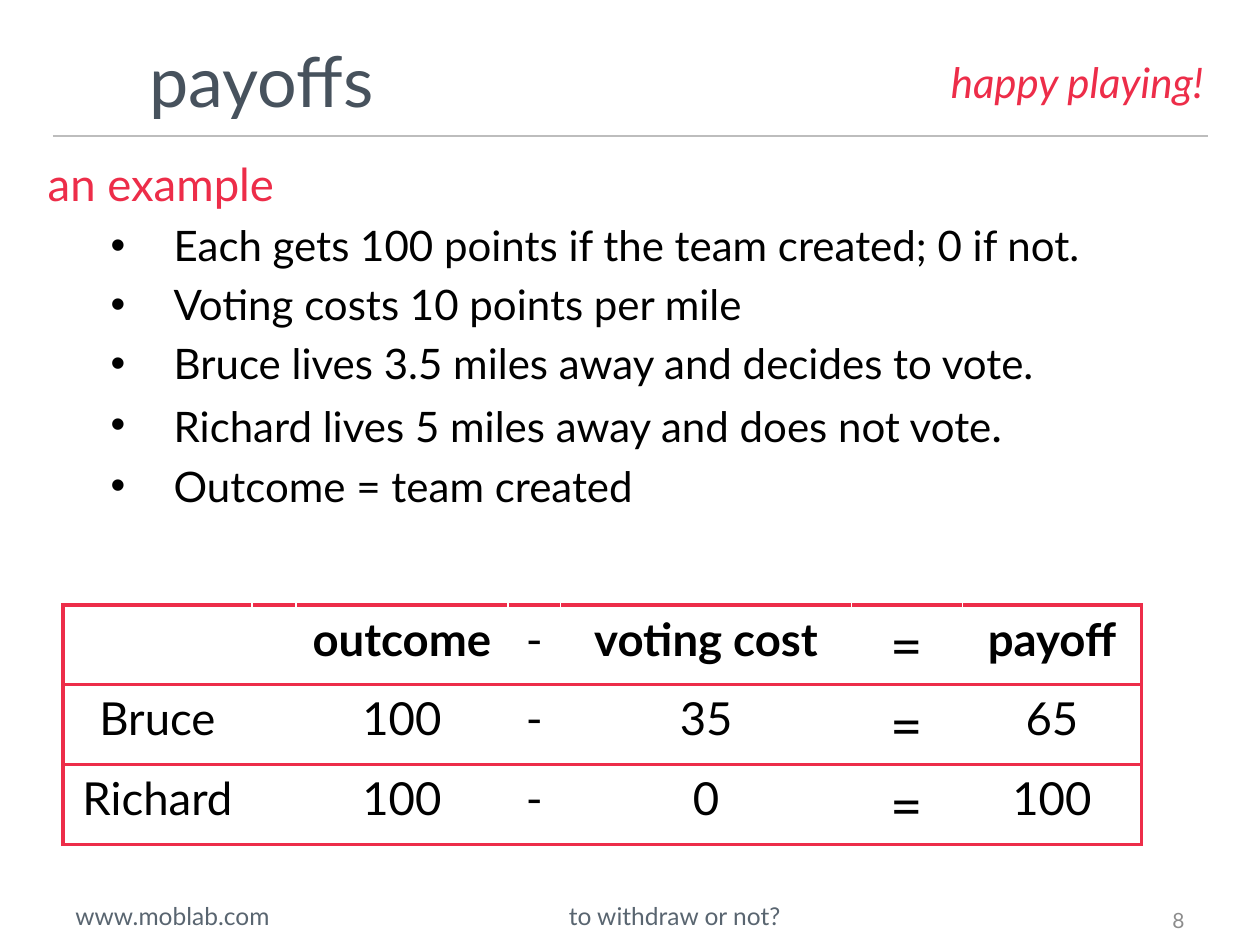
from lxml import etree
from pptx import Presentation
from pptx.dml.color import RGBColor
from pptx.enum.shapes import MSO_CONNECTOR
from pptx.enum.text import MSO_ANCHOR, PP_ALIGN
from pptx.oxml.ns import qn
from pptx.util import Inches, Pt

LEFT, CENTER, RIGHT = PP_ALIGN.LEFT, PP_ALIGN.CENTER, PP_ALIGN.RIGHT
TOP, MIDDLE = MSO_ANCHOR.TOP, MSO_ANCHOR.MIDDLE
STRAIGHT = MSO_CONNECTOR.STRAIGHT

FONT = "Lato"
RED, BLACK, SLATE, FOOTER_GRAY = "ED2D49", "000000", "47525D", "596570"
NUMBER_GRAY, RULE_GRAY = "8C8C8C", "BDBDBD"

FACTS = [
    "Each gets 100 points if the team created; 0 if not.",
    "Voting costs 10 points per mile",
    "Bruce lives 3.5 miles away and decides to vote.",
    "Richard lives 5 miles away and does not vote.",
    "Outcome = team created",
]
PAYOFF_COLUMNS = [1.5, 0.35, 1.68, 0.42, 2.31, 0.88, 1.42]
PAYOFF_ROWS = [
    ["", "", "outcome", "-", "voting cost", "=", "payoff"],
    ["Bruce", "", "100", "-", "35", "=", "65"],
    ["Richard", "", "100", "-", "0", "=", "100"],
]


def rgb(color):
    return RGBColor.from_string(color)


def style(font, size, color, bold=False, italic=False):
    font.name, font.size = FONT, Pt(size)
    font.bold, font.italic = bold, italic
    font.color.rgb = rgb(color)


def add_text_frame(slide, box, anchor=TOP):
    frame = slide.shapes.add_textbox(*map(Inches, box)).text_frame
    frame.word_wrap = True
    frame.vertical_anchor = anchor
    return frame


def add_line_of_text(slide, box, text, size, color, align=LEFT, anchor=TOP, italic=False):
    frame = add_text_frame(slide, box, anchor)
    paragraph = frame.paragraphs[0]
    paragraph.text, paragraph.alignment = text, align
    style(paragraph.font, size, color, italic=italic)
    return frame


def add_header(slide, left, top, width, height):
    title = add_line_of_text(slide, (left + 0.67, top, 8.35, 0.79), "payoffs", 40, SLATE,
                             anchor=MIDDLE)
    title.margin_top = 0
    add_line_of_text(slide, (left + width - 2.22, top + 0.14, 2.28, 0.5),
                     "happy playing!", 24, RED, RIGHT, italic=True)
    rule_y = Inches(top + height)
    rule = slide.shapes.add_connector(STRAIGHT, Inches(left), rule_y,
                                      Inches(left + width), rule_y)
    rule.line.color.rgb = rgb(RULE_GRAY)
    rule.line.width = Pt(1)
    etree.SubElement(rule._element.spPr, qn("a:effectLst"))


def add_bullet(paragraph, margin, hanging):
    properties = paragraph._p.get_or_add_pPr()
    properties.set("marL", str(Inches(margin)))
    properties.set("indent", str(-Inches(hanging)))
    etree.SubElement(properties, qn("a:buFont"), typeface="Arial")
    etree.SubElement(properties, qn("a:buChar"), char="•")


def add_example(slide, box):
    frame = add_line_of_text(slide, box, "an example", 26, RED)
    for fact in FACTS:
        paragraph = frame.add_paragraph()
        paragraph.level = 1
        add_bullet(paragraph, 1, 0.5)
        paragraph.space_before = Pt(5)
        sentence = paragraph.add_run()
        sentence.text = fact
        style(paragraph.font, 24, BLACK)
        if fact.startswith("Richard"):
            sentence.text = fact[:-1]
            full_stop = paragraph.add_run()
            full_stop.text = fact[-1]
            full_stop.font.size = Pt(26)


def add_border(cell, side):
    """Draw one border; side is L, R, T or B, and calls must keep that order."""
    line = etree.SubElement(cell._tc.get_or_add_tcPr(), qn(f"a:ln{side}"), w=str(Pt(2.25)))
    fill = etree.SubElement(line, qn("a:solidFill"))
    etree.SubElement(fill, qn("a:srgbClr"), val=RED)


def add_payoff_table(slide, left, top, width, height):
    row_count, column_count = len(PAYOFF_ROWS), len(PAYOFF_COLUMNS)
    table = slide.shapes.add_table(row_count, column_count, Inches(left), Inches(top),
                                   Inches(width), Inches(height)).table
    table.first_row = table.horz_banding = False
    for column, column_width in zip(table.columns, PAYOFF_COLUMNS):
        column.width = Inches(column_width)
    outer_sides = {0: "LTB", column_count - 1: "RTB"}
    for r, row in enumerate(PAYOFF_ROWS):
        for c, text in enumerate(row):
            cell = table.cell(r, c)
            for side in outer_sides.get(c, "TB"):
                add_border(cell, side)
            cell.fill.background()
            paragraph = cell.text_frame.paragraphs[0]
            paragraph.text, paragraph.alignment = text, CENTER
            style(paragraph.font, 32 if text == "=" else 26, BLACK,
                  bold=r == 0 and text not in ("-", "="))


def add_footer(slide, left, top, width, height):
    add_line_of_text(slide, (left, top, 2.49, height), "www.moblab.com", 14, FOOTER_GRAY)
    add_line_of_text(slide, (left + 2.79, top, 4.13, height), "to withdraw or not?", 14,
                     FOOTER_GRAY, CENTER)
    add_line_of_text(slide, (left + width - 1.35, top, 1.35, height), "8", 12,
                     NUMBER_GRAY, RIGHT, MIDDLE)


def main():
    presentation = Presentation()
    presentation.slide_width, presentation.slide_height = Inches(10), Inches(7.5)
    slide = presentation.slides.add_slide(presentation.slide_layouts[6])
    add_header(slide, 0.42, 0.26, 9.17, 0.82)
    add_example(slide, (0.28, 1.19, 9.55, 5.49))
    add_payoff_table(slide, 0.5, 4.8, 8.56, 1.9)
    add_footer(slide, 0.5, 7.1, 9, 0.4)
    presentation.save("out.pptx")


if __name__ == "__main__":
    main()
